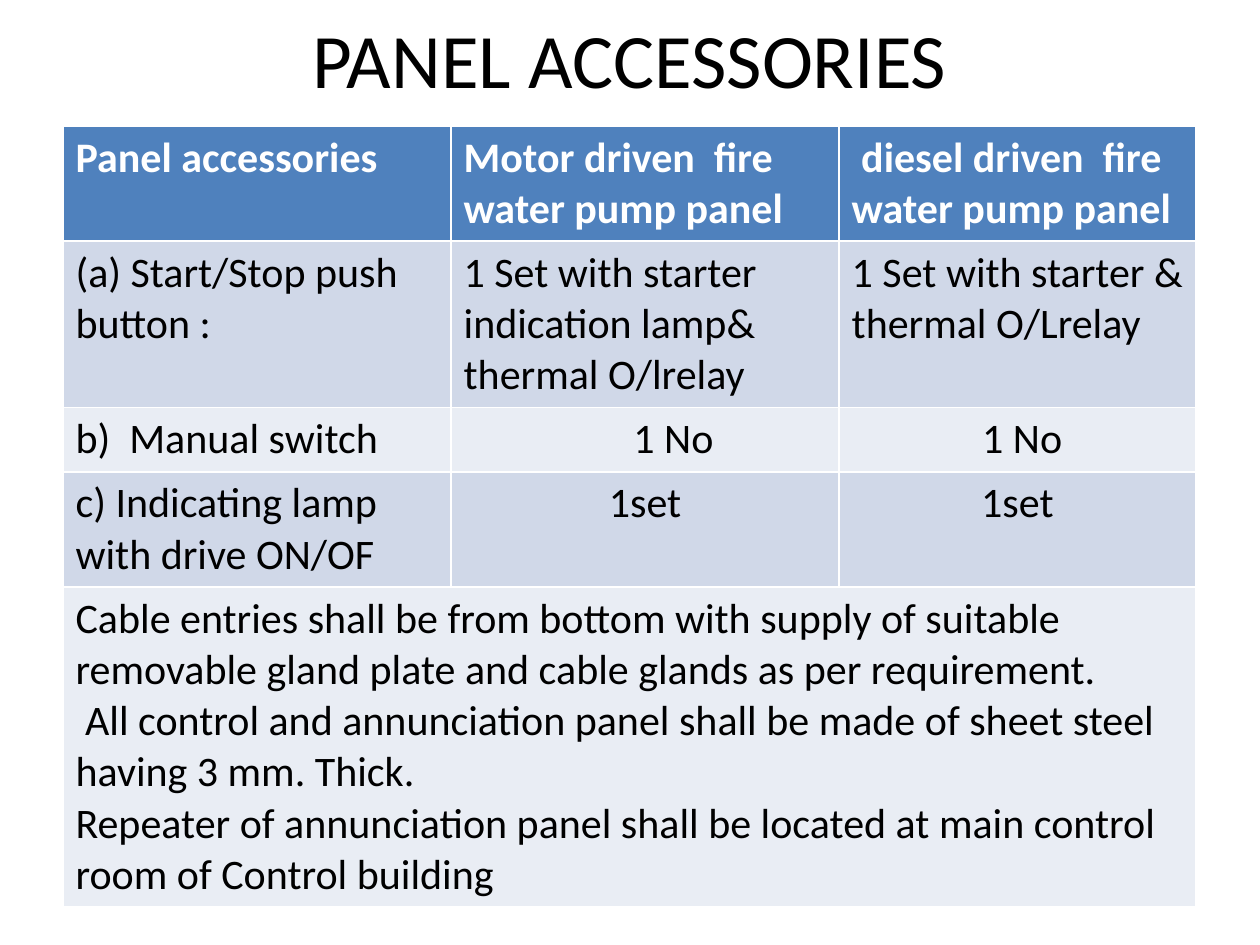
from dataclasses import dataclass

from pptx import Presentation
from pptx.dml.color import RGBColor
from pptx.enum import text
from pptx.util import Inches, Pt


@dataclass(frozen=True)
class Theme:
    """Colours, font and type sizes of the deck."""
    font: str = "Calibri"
    title_size: int = 44
    table_size: int = 24
    ink: str = "000000"
    header_ink: str = "FFFFFF"
    header_fill: str = "4F81BD"
    bands: tuple = ("D0D8E8", "E9EDF4")


THEME = Theme()
COLUMN_WIDTHS = (3.08, 3.08, 2.83)
ROW_HEIGHTS = (0.9, 1.32, 0.51, 0.91, 2.54)
ROWS = (
    ("Panel accessories", "Motor driven  fire water pump panel",
     " diesel driven  fire water pump panel"),
    ("(a) Start/Stop push button :",
     "1 Set with starter indication lamp& thermal O/lrelay",
     "1 Set with starter & thermal O/Lrelay"),
    ("b)  Manual switch", "1 No", " 1 No"),
    ("c) Indicating lamp with drive ON/OF", "1set", "1set"),
)
NOTES = (
    "Cable entries shall be from bottom with supply of suitable removable "
    "gland plate and cable glands as per requirement.",
    " All control and annunciation panel shall be made of sheet steel "
    "having 3 mm. Thick.",
    "Repeater of annunciation panel shall be located at main control room "
    "of Control building",
)
MANUAL_ROW, LAMP_ROW, NOTES_ROW = 2, 3, 4


def style_para(para, size, color, bold=False, align=None):
    """Set the font and alignment of one paragraph."""
    para.font.name = THEME.font
    para.font.size = Pt(size)
    para.font.bold = bold
    para.font.color.rgb = RGBColor.from_string(color)
    para.alignment = align


def fill_cell(cell, words, row, centred=False):
    """Write a table cell and colour it by its row."""
    header = row == 0
    fill = THEME.header_fill if header else THEME.bands[(row - 1) % 2]
    cell.fill.solid()
    cell.fill.fore_color.rgb = RGBColor.from_string(fill)
    cell.text_frame.text = words
    for para in cell.text_frame.paragraphs:
        style_para(para, THEME.table_size,
                   THEME.header_ink if header else THEME.ink, header,
                   text.PP_ALIGN.CENTER if centred else None)


def add_title(page, box, words):
    """Place the title placeholder in the given box."""
    title = page.shapes.title
    title.left, title.top, title.width, title.height = map(Inches, box)
    frame = title.text_frame
    frame.text = words
    frame.vertical_anchor = text.MSO_ANCHOR.MIDDLE
    style_para(frame.paragraphs[0], THEME.title_size, THEME.ink,
               align=text.PP_ALIGN.CENTER)


def add_accessories(page, box):
    """Build the accessories table in the given box."""
    table = page.shapes.add_table(
        len(ROW_HEIGHTS), len(COLUMN_WIDTHS), *map(Inches, box)).table
    for column, width in zip(table.columns, COLUMN_WIDTHS):
        column.width = Inches(width)
    for row, height in zip(table.rows, ROW_HEIGHTS):
        row.height = Inches(height)
    for row, entries in enumerate(ROWS):
        for column, words in enumerate(entries):
            centred = row in (MANUAL_ROW, LAMP_ROW) and column > 0
            fill_cell(table.cell(row, column), words, row, centred)
    table.cell(MANUAL_ROW, 1).margin_left = Inches(0.55)
    notes = table.cell(NOTES_ROW, 0)
    notes.merge(table.cell(NOTES_ROW, len(COLUMN_WIDTHS) - 1))
    fill_cell(notes, "\n".join(NOTES), NOTES_ROW)


def main():
    """Build and save the deck."""
    deck = Presentation()
    deck.slide_width, deck.slide_height = Inches(10), Inches(7.5)
    page = deck.slides.add_slide(deck.slide_layouts[5])
    add_title(page, (0.5, 0, 9, 0.92), "PANEL ACCESSORIES")
    add_accessories(page, (0.5, 1, sum(COLUMN_WIDTHS), sum(ROW_HEIGHTS)))
    deck.save("out.pptx")


if __name__ == "__main__":
    main()
